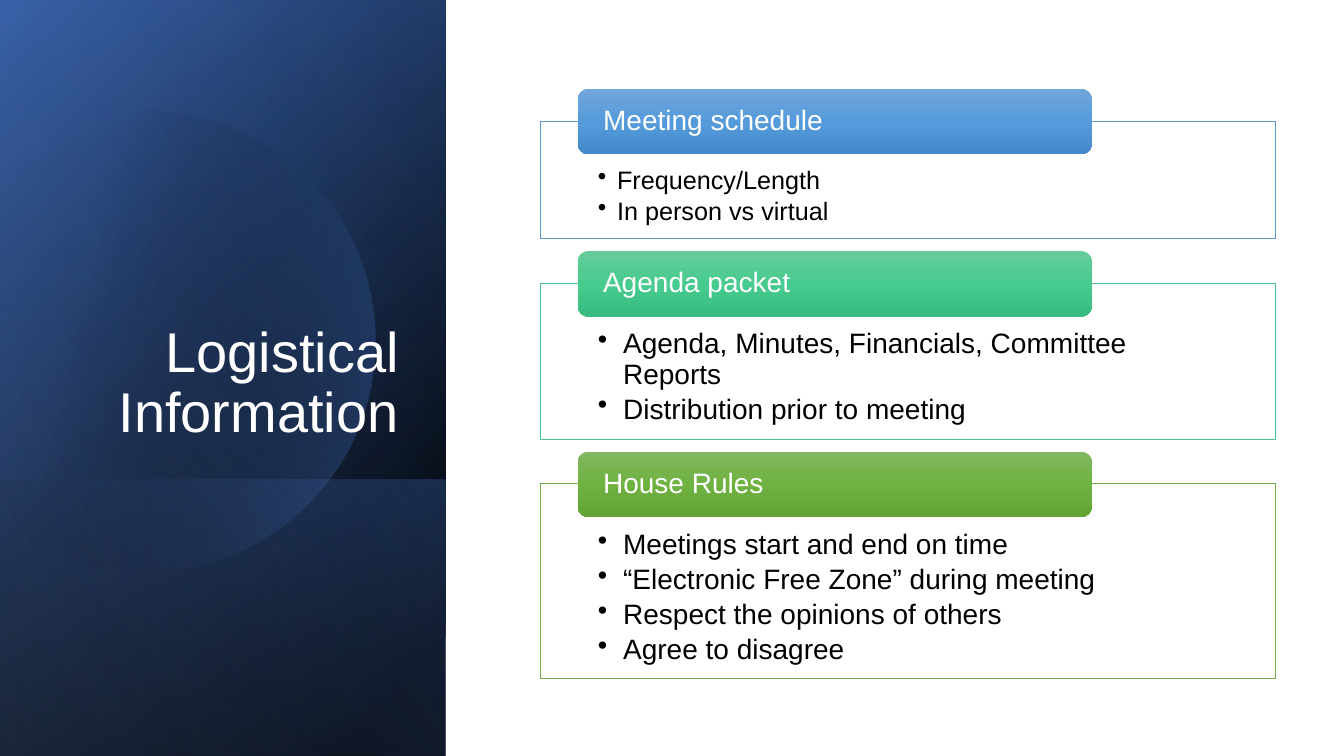
from dataclasses import dataclass

from lxml import etree
from pptx import Presentation
from pptx.dml.color import RGBColor
from pptx.enum.shapes import MSO_SHAPE
from pptx.enum.text import MSO_ANCHOR, PP_ALIGN
from pptx.oxml.ns import qn
from pptx.util import Inches, Pt

RECTANGLE = MSO_SHAPE.RECTANGLE
ROUNDED = MSO_SHAPE.ROUNDED_RECTANGLE
TOP, MIDDLE, BOTTOM = MSO_ANCHOR.TOP, MSO_ANCHOR.MIDDLE, MSO_ANCHOR.BOTTOM
LEFT, RIGHT = PP_ALIGN.LEFT, PP_ALIGN.RIGHT

BLACK = RGBColor(0x00, 0x00, 0x00)
WHITE = RGBColor(0xFF, 0xFF, 0xFF)
NAVY = RGBColor(0x2F, 0x55, 0x97)
BLUE = RGBColor(0x44, 0x72, 0xC4)
PALE_BLUE = RGBColor(0x8F, 0xAA, 0xDC)
SKY_LINE = RGBColor(0x5B, 0x9B, 0xD5)
SKY = (RGBColor(0x71, 0xA6, 0xDB), RGBColor(0x55, 0x9B, 0xDB), RGBColor(0x44, 0x8A, 0xCA))
MINT_LINE = RGBColor(0x4D, 0xC5, 0x8D)
MINT = (RGBColor(0x67, 0xCC, 0x9A), RGBColor(0x47, 0xCB, 0x8E), RGBColor(0x39, 0xBB, 0x7F))
LEAF_LINE = RGBColor(0x70, 0xAD, 0x47)
LEAF = (RGBColor(0x81, 0xB8, 0x61), RGBColor(0x6F, 0xB2, 0x42), RGBColor(0x62, 0xA3, 0x36))

FONT = "Arial"
CARD_LEFT, CARD_WIDTH, CARD_GAP = 5.36, 7.29, 0.44
HEADER_LEFT, HEADER_WIDTH, HEADER_HEIGHT, HEADER_RISE = 5.73, 5.1, 0.65, 0.32
CURVE_STEPS = 24


@dataclass
class Stop:
    position: int
    color: RGBColor
    opacity: int = 100


@dataclass
class Panel:
    box: tuple[float, float, float, float]
    stops: list[Stop]
    angle: float


@dataclass
class Card:
    heading: str
    items: list[str]
    height: float
    size: int
    indent: float
    bottom_inset: float
    line: RGBColor
    shades: tuple[RGBColor, RGBColor, RGBColor]


PANELS = [
    Panel((-1.54, 1.54, 7.5, 4.42), [Stop(8, BLACK), Stop(100, NAVY)], 50),
    Panel((-1.54, 1.55, 7.5, 4.42), [Stop(0, BLACK, 0), Stop(99, BLUE, 46)], 30),
    Panel((0.84, 3.92, 2.74, 4.42), [Stop(2, BLUE, 29), Stop(100, BLACK, 30)], 130),
]
SHEEN = Panel((-1.54, 1.54, 7.5, 4.42), [Stop(0, BLACK, 0), Stop(99, PALE_BLUE, 11)], 120)

DISC_STOPS = [Stop(29, BLACK, 0), Stop(100, BLUE, 43)]
DISC_START = (1.49, 1.1)
DISC_RIGHT = [
    ((2.46, 1.12), (3.35, 1.77), (3.63, 2.75)),
    ((3.98, 3.97), (3.28, 5.23), (2.07, 5.58)),
    ((1.31, 5.8), (0.53, 5.61), (-0.03, 5.14)),
]
DISC_EDGE = [(-0.15, 5.03), (-0.15, 1.75), (0, 1.61)]
DISC_TOP = [
    ((0.23, 1.42), (0.5, 1.28), (0.8, 1.19)),
    ((1.03, 1.13), (1.26, 1.1), DISC_START),
]

CARDS = [
    Card("Meeting schedule", ["Frequency/Length", "In person vs virtual"],
         1.17, 18, 0.19, 0.14, SKY_LINE, SKY),
    Card("Agenda packet",
         ["Agenda, Minutes, Financials, Committee Reports", "Distribution prior to meeting"],
         1.55, 20, 0.25, 0.16, MINT_LINE, MINT),
    Card("House Rules",
         ["Meetings start and end on time", "“Electronic Free Zone” during meeting",
          "Respect the opinions of others", "Agree to disagree"],
         1.93, 20, 0.25, 0.16, LEAF_LINE, LEAF),
]


def add_opacity(color_element, opacity: int) -> None:
    if opacity < 100:
        etree.SubElement(color_element, qn("a:alpha"), val=str(opacity * 1000))


def fill_gradient(shape, stops: list[Stop], angle: float) -> None:
    shape.fill.gradient()
    gradient = shape._element.spPr.find(qn("a:gradFill"))
    stop_list = gradient.find(qn("a:gsLst"))
    for old_stop in list(stop_list):
        stop_list.remove(old_stop)
    for stop in stops:
        entry = etree.SubElement(stop_list, qn("a:gs"), pos=str(stop.position * 1000))
        color = etree.SubElement(entry, qn("a:srgbClr"), val=str(stop.color))
        add_opacity(color, stop.opacity)
    gradient.find(qn("a:lin")).set("ang", str(round(angle * 60000)))


def add_box(page, kind, box: tuple[float, float, float, float]):
    shape = page.shapes.add_shape(kind, *map(Inches, box))
    shape.shadow.inherit = False
    shape.line.fill.background()
    return shape


def add_panel(page, panel: Panel) -> None:
    shape = add_box(page, RECTANGLE, panel.box)
    shape.rotation = 90
    shape._element.spPr.find(qn("a:xfrm")).set("flipH", "1")
    fill_gradient(shape, panel.stops, panel.angle)


def trace_curves(start: tuple, curves: list[tuple]) -> list[tuple]:
    points = []
    for first, second, end in curves:
        for step in range(1, CURVE_STEPS + 1):
            t = step / CURVE_STEPS
            weights = ((1 - t) ** 3, 3 * t * (1 - t) ** 2, 3 * t * t * (1 - t), t ** 3)
            corners = (start, first, second, end)
            points.append(tuple(sum(w * c[axis] for w, c in zip(weights, corners))
                                for axis in (0, 1)))
        start = end
    return points


def add_disc(page) -> None:
    points = trace_curves(DISC_START, DISC_RIGHT) + DISC_EDGE
    points += trace_curves(DISC_EDGE[-1], DISC_TOP)
    builder = page.shapes.build_freeform(*map(Inches, DISC_START))
    builder.add_line_segments([tuple(map(Inches, point)) for point in points], close=True)
    disc = builder.convert_to_shape()
    disc.shadow.inherit = False
    disc.line.fill.background()
    fill_gradient(disc, DISC_STOPS, 14)


def write_text(shape, lines: list[str], size: int, color: RGBColor, anchor, align,
               insets: tuple[float, float, float, float], indent: float = 0) -> None:
    frame = shape.text_frame
    sides = ("margin_left", "margin_top", "margin_right", "margin_bottom")
    settings = {"word_wrap": True, "vertical_anchor": anchor,
                **dict(zip(sides, map(Inches, insets)))}
    for name, value in settings.items():
        setattr(frame, name, value)
    for number, line in enumerate(lines):
        para = frame.add_paragraph() if number else frame.paragraphs[0]
        para.alignment = align
        para.line_spacing = 0.9
        if indent:
            properties = para._p.get_or_add_pPr()
            properties.set("marL", str(Inches(indent)))
            properties.set("indent", str(-Inches(indent)))
            etree.SubElement(properties, qn("a:buChar"), char="•")
            para.space_after = Pt(round(size * 0.17, 1))
        span = para.add_run()
        span.text = line
        for name, value in {"name": FONT, "size": Pt(size)}.items():
            setattr(span.font, name, value)
        span.font.color.rgb = color


def add_card(page, card: Card, top: float) -> None:
    body = add_box(page, RECTANGLE, (CARD_LEFT, top, CARD_WIDTH, card.height))
    body.fill.solid()
    body.fill.fore_color.rgb = WHITE
    add_opacity(body._element.spPr.find(qn("a:solidFill"))[0], 90)
    body.line.color.rgb = card.line
    body.line.width = Pt(0.5)
    write_text(body, card.items, card.size, BLACK, TOP, LEFT,
               (0.57, 0.46, 0.57, card.bottom_inset), card.indent)
    header = add_box(page, ROUNDED,
                     (HEADER_LEFT, top - HEADER_RISE, HEADER_WIDTH, HEADER_HEIGHT))
    fill_gradient(header, [Stop(50 * i, shade) for i, shade in enumerate(card.shades)], 90)
    write_text(header, [card.heading], 20, WHITE, MIDDLE, LEFT, (0.22, 0, 0.22, 0))


def main() -> None:
    deck = Presentation()
    deck.slide_width, deck.slide_height = Inches(13.33), Inches(7.5)
    page = deck.slides.add_slide(deck.slide_layouts[6])
    for panel in PANELS:
        add_panel(page, panel)
    add_disc(page)
    add_panel(page, SHEEN)
    title = page.shapes.add_textbox(*map(Inches, (0.64, 1.84, 3.41, 2.62)))
    write_text(title, ["Logistical Information"], 40, WHITE, BOTTOM, RIGHT,
               (0.1, 0.05, 0.1, 0.05))
    top = 1.2
    for card in CARDS:
        add_card(page, card, top)
        top += card.height + CARD_GAP
    deck.save("out.pptx")


if __name__ == "__main__":
    main()
